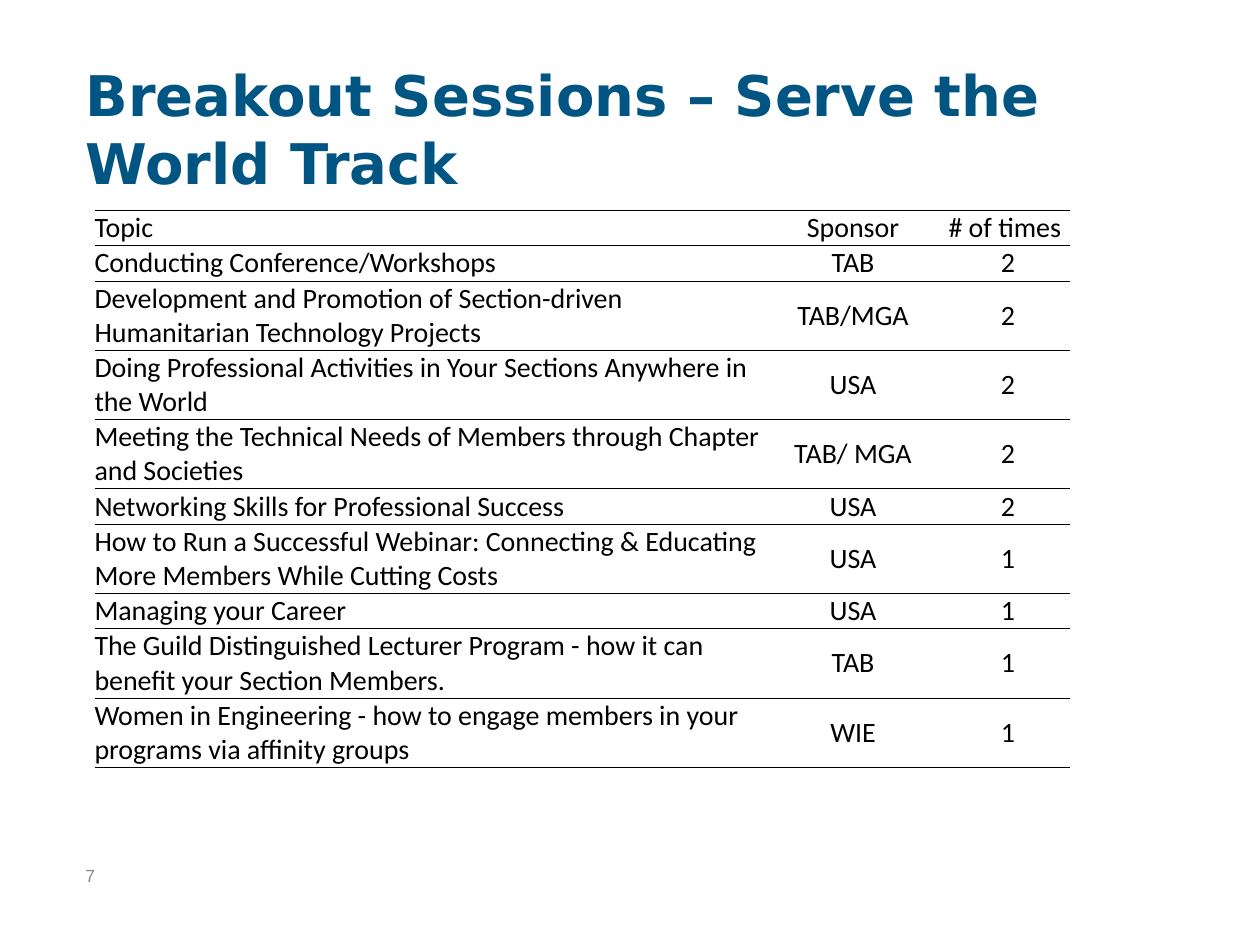
from lxml import etree
from pptx import Presentation
from pptx.dml.color import RGBColor
from pptx.enum.text import MSO_ANCHOR as Anchor, PP_ALIGN as Align
from pptx.oxml.ns import qn
from pptx.util import Inches, Pt

COLOURS = {"title": "005582", "text": "000000", "page": "898989", "white": "FFFFFF"}
COLUMN_WIDTHS = [5.28, 1.48, 0.98]
ONE_LINE, TWO_LINES = 0.28, 0.55
SESSIONS = [
    ("Topic", "Sponsor", "# of times ", ONE_LINE),
    ("Conducting Conference/Workshops", "TAB", "2", ONE_LINE),
    ("Development and Promotion of Section-driven Humanitarian Technology Projects",
     "TAB/MGA", "2", TWO_LINES),
    ("Doing Professional Activities in Your Sections Anywhere in the World",
     "USA", "2", TWO_LINES),
    ("Meeting the Technical Needs of Members through Chapter and Societies",
     "TAB/ MGA", "2", TWO_LINES),
    ("Networking Skills for Professional Success", "USA", "2", ONE_LINE),
    ("How to Run a Successful Webinar: Connecting & Educating More Members While Cutting Costs",
     "USA", "1", TWO_LINES),
    ("Managing your Career", "USA", "1", ONE_LINE),
    ("The Guild Distinguished Lecturer Program - how it can benefit your Section Members.",
     "TAB", "1", TWO_LINES),
    ("Women in Engineering - how to engage members in your programs via affinity groups",
     "WIE", "1", TWO_LINES),
]


class SlideWriter:
    def __init__(self, slide):
        self.slide = slide

    def add_run(self, para, text, font, size, colour, bold=False):
        span = para.add_run()
        span.text = text
        span.font.name = font
        span.font.size = Pt(size)
        span.font.bold = bold
        span.font.color.rgb = RGBColor.from_string(COLOURS[colour])

    def add_text(self, area, text, font, size, colour, bold=False,
                 anchor=Anchor.TOP, line_spacing=None):
        box = self.slide.shapes.add_textbox(*map(Inches, area))
        frame = box.text_frame
        frame.word_wrap = True
        frame.vertical_anchor = anchor
        para = frame.paragraphs[0]
        para.line_spacing = line_spacing
        self.add_run(para, text, font, size, colour, bold)

    def set_borders(self, cell, top, bottom):
        """Draw rules of the given point widths above and below, none at the sides."""
        properties = cell._tc.get_or_add_tcPr()
        borders = [("a:lnL", 0), ("a:lnR", 0), ("a:lnT", top), ("a:lnB", bottom)]
        for position, (tag, width) in enumerate(borders):
            line = etree.Element(qn(tag), w=str(Pt(width)))
            if width:
                fill = etree.SubElement(line, qn("a:solidFill"))
                etree.SubElement(fill, qn("a:srgbClr"), val=COLOURS["text"])
            else:
                etree.SubElement(line, qn("a:noFill"))
            properties.insert(position, line)

    def add_cell(self, cell, text, centred, top, bottom):
        cell.margin_left = cell.margin_right = cell.margin_top = cell.margin_bottom = 0
        cell.vertical_anchor = Anchor.MIDDLE
        para = cell.text_frame.paragraphs[0]
        para.alignment = Align.CENTER if centred else Align.LEFT
        self.add_run(para, text, "Calibri", 16, "text")
        self.set_borders(cell, top, bottom)

    def add_sessions(self, left, top):
        width = sum(COLUMN_WIDTHS)
        height = sum(session[-1] for session in SESSIONS)
        table = self.slide.shapes.add_table(
            len(SESSIONS), len(COLUMN_WIDTHS), *map(Inches, (left, top, width, height))).table
        table.first_row = table.horz_banding = False
        for column, column_width in zip(table.columns, COLUMN_WIDTHS):
            column.width = Inches(column_width)
        for row, (*texts, row_height) in enumerate(SESSIONS):
            table.rows[row].height = Inches(row_height)
            above = 1 if row == 1 else 0.5
            below = 1 if row == 0 else 0.5
            for column, text in enumerate(texts):
                cell = table.cell(row, column)
                if column == 1:
                    cell.fill.solid()
                    cell.fill.fore_color.rgb = RGBColor.from_string(COLOURS["white"])
                else:
                    cell.fill.background()
                self.add_cell(cell, text, column > 0, above, below)


def main():
    deck = Presentation()
    deck.slide_width, deck.slide_height = Inches(10), Inches(7.5)
    writer = SlideWriter(deck.slides.add_slide(deck.slide_layouts[6]))
    writer.add_text((0.58, 0.42, 8.75, 0.67), "Breakout Sessions – Serve the World Track",
                    "DejaVu Sans", 32, "title", bold=True, line_spacing=Pt(39))
    writer.add_text((0.58, 6.75, 0.75, 0.4), "7", "Arial", 10, "page", anchor=Anchor.MIDDLE)
    writer.add_sessions(0.75, 1.67)
    deck.save("out.pptx")


if __name__ == "__main__":
    main()
